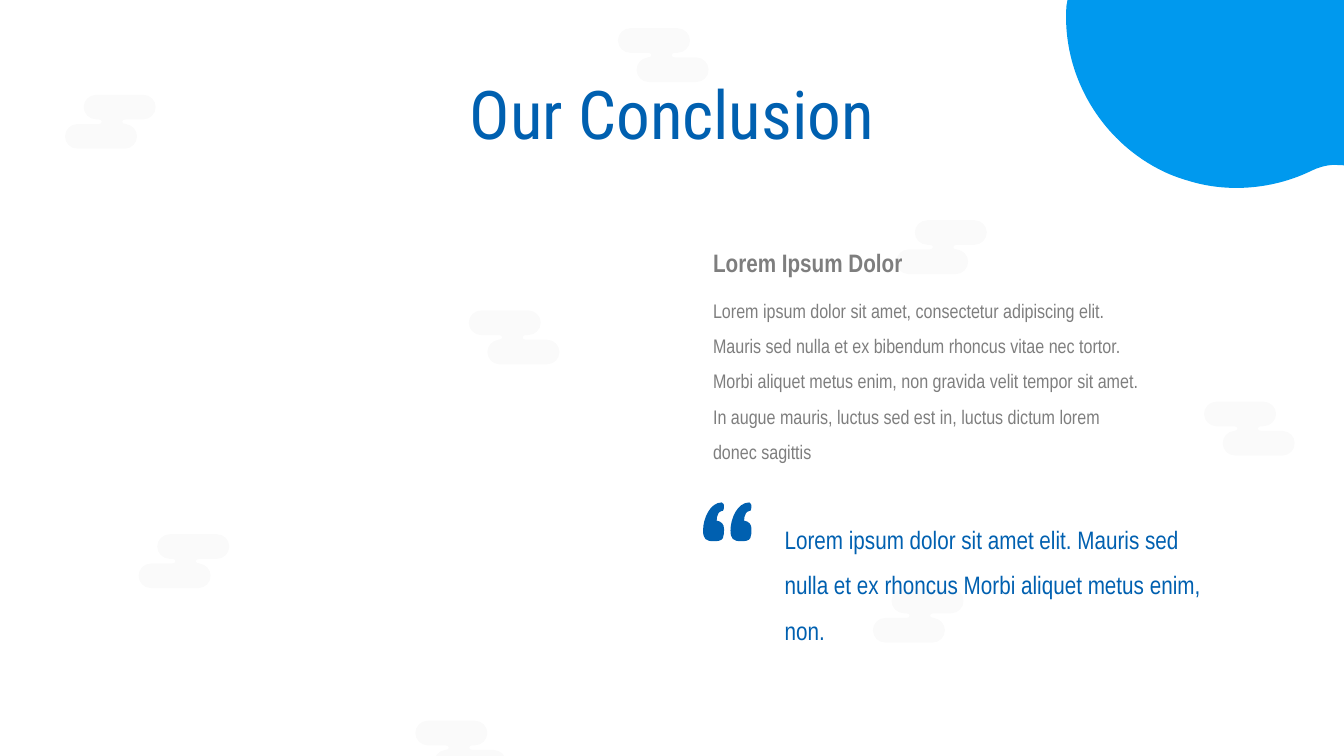
from lxml import etree
from pptx import Presentation
from pptx.dml.color import RGBColor
from pptx.enum.text import MSO_ANCHOR, MSO_AUTO_SIZE, PP_ALIGN
from pptx.oxml.ns import qn
from pptx.util import Pt

CENTER, LEFT = PP_ALIGN.CENTER, PP_ALIGN.LEFT
MIDDLE, TOP = MSO_ANCHOR.MIDDLE, MSO_ANCHOR.TOP
NO_FIT, GROW = MSO_AUTO_SIZE.NONE, MSO_AUTO_SIZE.SHAPE_TO_FIT_TEXT

THEME = {
    "blue": "0060B0", "sky": "0099EE", "grey": "7E7E7E", "cloud": "000000",
    "title_font": "Roboto Condensed", "body_font": "Arial Narrow",
    "title": 96, "heading": 36, "quote": 36, "body": 28,
}

CLOUD_WIDTH = 129.6
CLOUD = [
    (85, 0), (17.5, 0), (8, 0, 0, 8, 0, 17.6), (0, 27, 8, 35.2, 17.5, 35.2),
    (42.5, 35.2), (45.5, 35.2, 48, 36.5, 48, 38.5), (48, 40.5, 45.5, 41.8, 42.5, 41.8),
    (33.5, 43, 26.7, 50.5, 26.7, 59.5), (26.7, 69, 34.5, 77, 44, 77),
    (112, 77), (122, 77, 129.6, 69, 129.6, 59.5), (129.6, 50, 122, 41.8, 112, 41.8),
    (82, 41.8), (79, 41.8, 77, 40.5, 77, 38.5), (77, 36.5, 79, 35.2, 82, 35.2),
    (85, 35.2), (95, 35.2, 103, 27, 103, 17.6), (103, 8, 95, 0, 85, 0),
]
QUOTE_MARK = [
    (26.8, 0), (28, 0, 28.8, 0.7, 29, 2), (30.3, 3, 30.3, 9.5, 28.3, 12.2), (26.8, 12.2),
    (25, 12.5, 23, 14, 22, 15.5), (20, 19, 19.5, 22, 19.4, 26),
    (26, 27, 30, 31, 30, 38), (30, 42, 30, 47, 28.3, 51),
    (26, 55, 21, 55.4, 15, 55.4), (4, 55.4, 0, 52, 0, 40), (0, 23, 10, 0, 26.8, 0),
]
CORNER = [
    (1525, 0), (1920, 0), (1920, 236.2), (1905, 235.5),
    (1894.3, 236, 1883.5, 239, 1873.4, 244), (1821.6, 269.3, 1757, 276.5, 1698.5, 258.5),
    (1683.4, 254.2, 1668, 248.4, 1654.6, 241.2), (1569.6, 196.6, 1517, 104.4, 1523.5, 8.6),
]


def draw(outline, origins, color, mirror_width=None):
    points = [pair for segment in outline for pair in zip(segment[::2], segment[1::2])]
    if mirror_width:
        points = [(mirror_width - x, y) for x, y in points]
    builder = None
    for left, top in origins:
        placed = [(Pt(left + x), Pt(top + y)) for x, y in points]
        if builder is None:
            builder = s.shapes.build_freeform(*placed[0])
        else:
            builder.move_to(*placed[0])
        builder.add_line_segments(placed[1:], close=True)
    sp = builder.convert_to_shape()
    lines = iter(list(sp._element.iter(qn("a:lnTo"))))
    for segment in outline[1:] * len(origins):
        line = next(lines)
        if len(segment) == 6:
            curve = etree.Element(qn("a:cubicBezTo"))
            line.addprevious(curve)
            for part in (line, next(lines), next(lines)):
                curve.append(part[0])
                part.getparent().remove(part)
    sp.shadow.inherit = False
    sp.fill.solid()
    sp.fill.fore_color.rgb = RGBColor.from_string(color)
    sp.line.fill.background()
    return sp


def write(sp, text, box, size, color, font, bold=False, align=LEFT, anchor=TOP, spacing=1.0, fit=GROW):
    sp.left, sp.top, sp.width, sp.height = [Pt(v) for v in box]
    tf = sp.text_frame
    tf.word_wrap = True
    tf.auto_size = fit
    tf.vertical_anchor = anchor
    tf.margin_left = tf.margin_right = tf.margin_top = tf.margin_bottom = Pt(7.2)
    p = tf.paragraphs[0]
    p.alignment = align
    p.line_spacing = spacing
    p.space_before = Pt(0)
    r = p.add_run()
    r.text = text
    r.font.name = font
    r.font.size = Pt(size)
    r.font.bold = bold
    r.font.color.rgb = RGBColor.from_string(color)


prs = Presentation()
prs.slide_width, prs.slide_height = Pt(1920), Pt(1080)
s = prs.slides.add_slide(prs.slide_layouts[5])
title = s.shapes.title

for left, top, mirrored in [
    (669.6, 443.5, False), (92.9, 135.4, True), (1720, 573.8, False), (882.7, 40.3, False),
    (1247, 841, True), (1280.2, 314.6, True), (593.3, 1029.6, False), (198, 763.2, True),
]:
    cloud = draw(CLOUD, [(left, top)], THEME["cloud"], CLOUD_WIDTH if mirrored else None)
    clr = next(cloud._element.iter(qn("a:srgbClr")))
    etree.SubElement(clr, qn("a:alpha")).set("val", "2000")

draw(QUOTE_MARK, [(1004.4, 717.8), (1043.6, 717.8)], THEME["blue"])

s.shapes._spTree.append(title._element)
write(title, "Our Conclusion", (131.8, 64, 1656, 208.8), THEME["title"], THEME["blue"],
      THEME["title_font"], align=CENTER, anchor=MIDDLE, spacing=0.9, fit=NO_FIT)

for text, box, size, color, bold, spacing in [
    ("Lorem ipsum dolor sit amet, consectetur adipiscing elit. Mauris sed nulla et ex bibendum "
     "rhoncus vitae nec tortor. Morbi aliquet metus enim, non gravida velit tempor sit amet. "
     "In augue mauris, luctus sed est in, luctus dictum lorem donec sagittis",
     (1011.6, 402.5, 621.4, 265), THEME["body"], THEME["grey"], False, 1.5),
    ("Lorem ipsum dolor sit amet elit. Mauris sed nulla et ex rhoncus Morbi aliquet metus enim, non.",
     (1113.8, 720, 621.4, 186.5), THEME["quote"], THEME["blue"], False, 1.5),
    ("Lorem Ipsum Dolor",
     (1011.6, 345.6, 621.4, 58.3), THEME["heading"], THEME["grey"], True, 1.0),
]:
    write(s.shapes.add_textbox(0, 0, 0, 0), text, box, size, color, THEME["body_font"],
          bold=bold, spacing=spacing)

draw(CORNER, [(0, 0)], THEME["sky"])

prs.save("out.pptx")
